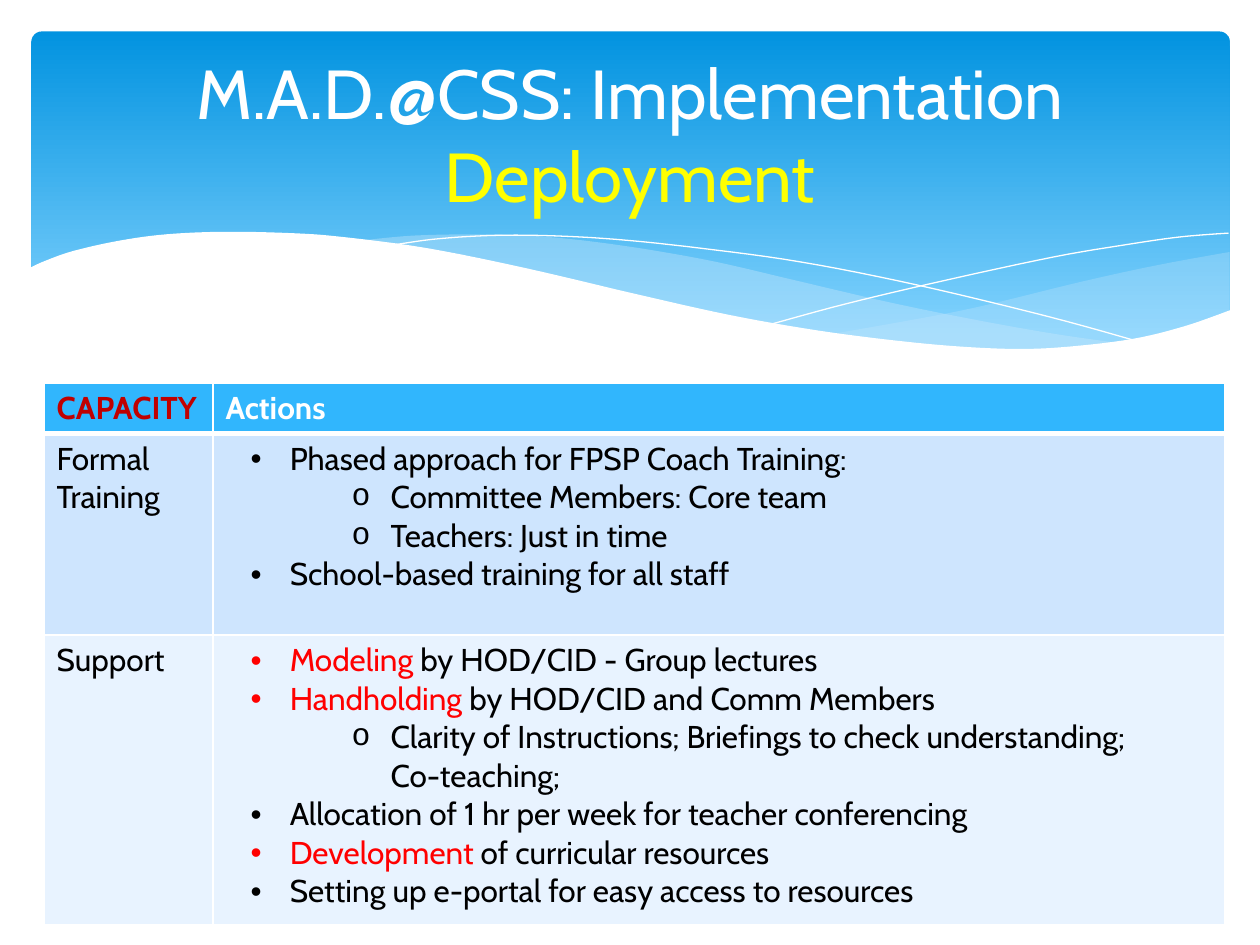
from lxml.etree import SubElement
from pptx import Presentation
from pptx.dml.color import RGBColor
from pptx.enum.shapes import MSO_SHAPE
from pptx.enum.text import MSO_ANCHOR, PP_ALIGN
from pptx.oxml.ns import qn
from pptx.util import Inches, Pt

# Grid of 10 columns by 7.5 rows with square cells
SLIDE_WIDTH, SLIDE_HEIGHT = Inches(10), Inches(7.5)
UNIT = SLIDE_WIDTH / 10

FONT = "Cabin"
WHITE = RGBColor(0xFF, 0xFF, 0xFF)
BLACK = RGBColor(0x00, 0x00, 0x00)
RED = RGBColor(0xFF, 0x00, 0x00)
DARK_RED = RGBColor(0xC0, 0x00, 0x00)
YELLOW = RGBColor(0xFF, 0xFF, 0x00)
SKY_TOP = RGBColor(0x02, 0x93, 0xE0)
SKY_BOTTOM = RGBColor(0x83, 0xD3, 0xFE)
MIST = RGBColor(0xC6, 0xE7, 0xFC)
HEADER_BLUE = RGBColor(0x31, 0xB6, 0xFD)
BAND_BLUE = RGBColor(0xCE, 0xE5, 0xFE)
PALE_BLUE = RGBColor(0xE8, 0xF3, 0xFF)

# Wave outlines: points that a smooth curve runs through
RIGHT_WAVE = [(9.76, 2), (9.21, 2.1), (8.61, 2.23), (7.79, 2.43), (7.29, 2.53), (6.61, 2.65)]
RIGHT_WAVE_BASE = [(6.61, 2.65), (7.18, 2.73), (7.69, 2.77), (8.14, 2.78), (8.63, 2.75),
                   (9.05, 2.69), (9.42, 2.59), (9.76, 2.47)]
LEFT_WAVE = [(8.93, 2.73), (8.37, 2.65), (7.75, 2.54), (7.06, 2.4), (6.29, 2.22), (5.69, 2.08),
             (5.14, 1.98), (4.64, 1.91), (4.2, 1.87), (3.8, 1.86), (3.28, 1.87), (2.86, 1.91)]
LEFT_WAVE_BASE = [(2.86, 1.91), (3.42, 1.99), (4.04, 2.11), (4.91, 2.32), (5.66, 2.48),
                  (6.34, 2.61), (6.95, 2.7), (7.48, 2.76), (7.96, 2.79), (8.48, 2.78), (8.93, 2.73)]
FALLING_LINE = [(3.09, 1.95), (3.43, 1.9), (3.87, 1.87), (4.33, 1.87), (4.89, 1.9), (5.56, 1.97),
                (6.36, 2.08), (7.27, 2.26), (8.31, 2.51), (9.07, 2.72)]
RISING_LINE = [(6.13, 2.57), (6.72, 2.41), (7.48, 2.23), (8.36, 2.04), (8.95, 1.94),
               (9.37, 1.88), (9.75, 1.85)]
WHITE_WAVE = [(9.77, 2.46), (9.4, 2.59), (8.99, 2.69), (8.5, 2.75), (8.09, 2.77), (7.61, 2.75),
              (7.08, 2.7), (6.47, 2.62), (5.79, 2.5), (5.03, 2.33), (4.18, 2.13), (3.39, 1.97),
              (2.71, 1.88), (2.3, 1.85), (1.77, 1.84), (1.32, 1.86), (0.95, 1.91), (0.59, 1.99),
              (0.36, 2.07), (0.23, 2.13)]

# Table rows: label, fill, then (level, runs) for each action
ROWS = [
    ("Formal Training", BAND_BLUE, [
        (1, [("Phased approach for FPSP Coach Training:", BLACK)]),
        (2, [("Committee Members: Core team", BLACK)]),
        (2, [("Teachers: Just in time", BLACK)]),
        (1, [("School-based training for all staff", BLACK)]),
    ]),
    ("Support", PALE_BLUE, [
        (1, [("Modeling ", RED), ("by HOD/CID - Group lectures", BLACK)]),
        (1, [("Handholding", RED), (" by HOD/CID and Comm Members", BLACK)]),
        (2, [("Clarity of Instructions; Briefings to check understanding;", BLACK), None,
             ("Co-teaching;", BLACK)]),
        (1, [("Allocation of 1 hr per week for teacher conferencing", BLACK)]),
        (1, [("Development", RED), (" of curricular resources", BLACK)]),
        (1, [("Setting up e-portal for easy access to resources", BLACK)]),
    ]),
]
BULLETS = {1: ("•", "Arial", 0.51), 2: ("o", "Courier New", 1.31)}
HANGING = 0.31


def grid(*lengths):
    return [round(length * UNIT) for length in lengths]


def curve(points, steps=6):
    """Catmull-Rom curve through the points."""
    padded = [points[0], *points, points[-1]]
    result = [points[0]]
    for a, b, c, d in zip(padded, padded[1:], padded[2:], padded[3:]):
        for step in range(1, steps + 1):
            t = step / steps
            result.append(tuple(
                (2 * q + (r - p) * t + (2 * p - 5 * q + 4 * r - s) * t ** 2
                 + (3 * q - p - 3 * r + s) * t ** 3) / 2
                for p, q, r, s in zip(a, b, c, d)))
    return result


def add_outline(slide, points, fill=None, opacity=100):
    """A filled wave, or an open hairline when no fill is given."""
    vertices = [grid(*point) for point in points]
    builder = slide.shapes.build_freeform(*vertices[0])
    builder.add_line_segments(vertices[1:], close=fill is not None)
    shape = builder.convert_to_shape()
    shape.shadow.inherit = False
    if fill is None:
        shape.fill.background()
        shape.line.color.rgb = WHITE
        shape.line.width = Pt(0)
        return
    shape.fill.solid()
    shape.fill.fore_color.rgb = fill
    shape.line.fill.background()
    if opacity < 100:
        color = shape.fill._xPr.find(qn("a:solidFill"))[0]
        SubElement(color, qn("a:alpha"), val=str(opacity * 1000))


def add_banner(slide):
    shape = slide.shapes.add_shape(MSO_SHAPE.ROUNDED_RECTANGLE, *grid(0.25, 0.25, 9.51, 2.7))
    shape.adjustments[0] = 0.03
    shape.shadow.inherit = False
    shape.line.fill.background()
    shape.fill.gradient()
    shape.fill.gradient_angle = 270
    stops = zip(shape.fill.gradient_stops, (SKY_TOP, SKY_BOTTOM), (0, 0.9))
    for stop, color, position in stops:
        stop.color.rgb = color
        stop.position = position


def add_run(paragraph, text, color, size=18, bold=False):
    run = paragraph.add_run()
    run.text = text
    run.font.name = FONT
    run.font.size = Pt(size)
    run.font.bold = bold
    run.font.color.rgb = color


def add_title(slide):
    frame = slide.shapes.add_textbox(*grid(0.5, 0.37, 9, 1.37)).text_frame
    frame.word_wrap = True
    frame.vertical_anchor = MSO_ANCHOR.MIDDLE
    paragraph = frame.paragraphs[0]
    paragraph.alignment = PP_ALIGN.CENTER
    add_run(paragraph, "M.A.D.@CSS: Implementation", WHITE, 39.6)
    paragraph.add_line_break()
    add_run(paragraph, "Deployment", YELLOW, 39.6)


def style_cell(cell, fill, top=1, bottom=1):
    properties = cell._tc.get_or_add_tcPr()
    for side, width in (("L", 1), ("R", 1), ("T", top), ("B", bottom)):
        border = SubElement(properties, qn(f"a:ln{side}"), w=str(Pt(width)))
        solid = SubElement(border, qn("a:solidFill"))
        SubElement(solid, qn("a:srgbClr"), val=str(WHITE))
    cell.fill.solid()
    cell.fill.fore_color.rgb = fill


def add_actions(cell, actions):
    frame = cell.text_frame
    for index, (level, runs) in enumerate(actions):
        paragraph = frame.add_paragraph() if index else frame.paragraphs[0]
        paragraph.level = level
        character, font, indent = BULLETS[level]
        properties = paragraph._p.get_or_add_pPr()
        margin, hanging = grid(indent, HANGING)
        properties.set("marL", str(margin))
        properties.set("indent", str(-hanging))
        SubElement(properties, qn("a:buFont"), typeface=font)
        SubElement(properties, qn("a:buChar"), char=character)
        for run in runs:
            if run is None:
                paragraph.add_line_break()
            else:
                add_run(paragraph, *run)


def add_capacity_table(slide):
    table = slide.shapes.add_table(3, 2, *grid(0.35, 3.04, 9.37, 4.3)).table
    for column, width in zip(table.columns, grid(1.34, 8.03)):
        column.width = width
    for row, height in zip(table.rows, grid(0.4, 1.6, 2.3)):
        row.height = height
    # Header row
    for column, (text, color) in enumerate([("CAPACITY", DARK_RED), ("Actions", WHITE)]):
        cell = table.cell(0, column)
        style_cell(cell, HEADER_BLUE, bottom=3)
        add_run(cell.text_frame.paragraphs[0], text, color, bold=True)
    # Body rows
    for index, (label, fill, actions) in enumerate(ROWS, start=1):
        label_cell, action_cell = table.cell(index, 0), table.cell(index, 1)
        for cell in (label_cell, action_cell):
            style_cell(cell, fill, top=3 if index == 1 else 1)
        add_run(label_cell.text_frame.paragraphs[0], label, BLACK)
        add_actions(action_cell, actions)


def main():
    presentation = Presentation()
    presentation.slide_width, presentation.slide_height = SLIDE_WIDTH, SLIDE_HEIGHT
    slide = presentation.slides.add_slide(presentation.slide_layouts[6])
    # Banner with waves
    add_banner(slide)
    add_outline(slide, curve(RIGHT_WAVE) + curve(RIGHT_WAVE_BASE), MIST, 29)
    add_outline(slide, curve(LEFT_WAVE) + curve(LEFT_WAVE_BASE), MIST, 40)
    add_outline(slide, curve(FALLING_LINE))
    add_outline(slide, curve(RISING_LINE))
    add_outline(slide, curve(WHITE_WAVE) + [(0.23, 3.29), (9.77, 3.29)], WHITE)
    # Text and table
    add_title(slide)
    add_capacity_table(slide)
    presentation.save("out.pptx")


if __name__ == "__main__":
    main()
